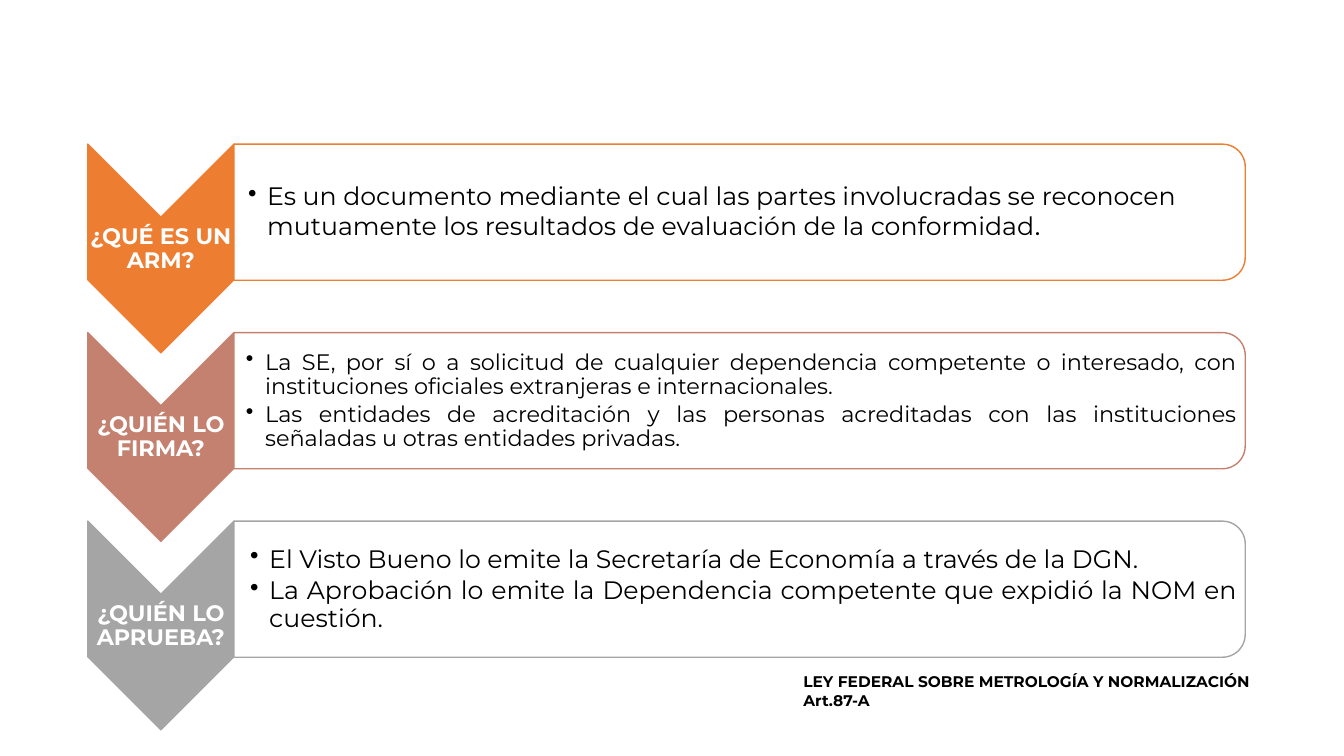
from lxml.etree import SubElement
from pptx import Presentation
from pptx.dml.color import RGBColor
from pptx.enum.shapes import MSO_SHAPE as Preset
from pptx.enum.text import MSO_ANCHOR as Anchor, PP_ALIGN as Align
from pptx.oxml.ns import qn
from pptx.util import Inches, Pt

COLORS = {"orange": "ED7D31", "clay": "C48170", "gray": "A5A5A5",
          "white": "FFFFFF", "black": "000000"}
FIRST_TOP, PITCH = 1.43, 1.87
ARROW_LEFT, ARROW_WIDTH, ARROW_HEIGHT = 0.87, 1.45, 2.07
PANEL_LEFT, PANEL_WIDTH, PANEL_HEIGHT = 2.32, 10.03, 1.35

# Question, color, answer alignment, left inset, answers as lists of (text, size)
QUESTIONS = [
    ("¿QUÉ ES UN ARM?", "orange", Align.LEFT, 0.14, [
        [("Es un documento mediante el cual las partes involucradas se reconocen "
          "mutuamente los resultados de evaluación de la conformidad", 18), (".", 20)]]),
    ("¿QUIÉN LO FIRMA?", "clay", Align.JUSTIFY, 0.12, [
        [("La SE, por sí o a solicitud de cualquier dependencia competente o interesado, "
          "con instituciones oficiales extranjeras e internacionales.", 16)],
        [("Las entidades de acreditación y las personas acreditadas con las instituciones "
          "señaladas u otras entidades privadas.", 16)]]),
    ("¿QUIÉN LO APRUEBA?", "gray", Align.JUSTIFY, 0.16, [
        [("El Visto Bueno lo emite la Secretaría de Economía a través de la DGN.", 18)],
        [("La Aprobación lo emite la Dependencia competente que expidió la NOM en "
          "cuestión.", 18)]]),
]
LAW = [[("LEY FEDERAL SOBRE METROLOGÍA Y NORMALIZACIÓN", 11)], [("Art.87-A", 11)]]


def rgb(name):
    return RGBColor.from_string(COLORS[name])


def apply(target, values):
    for name, value in values.items():
        setattr(target, name, value)


class SlideBuilder:
    font = "Montserrat"

    def __init__(self, slide):
        self.slide = slide

    def turned_shape(self, preset, left, top, width, height, fill, line):
        """Add a preset turned by 90 degrees that covers the given box once turned."""
        shift = (width - height) / 2
        shape = self.slide.shapes.add_shape(
            preset, Inches(left + shift), Inches(top - shift), Inches(height), Inches(width))
        shape.rotation = 90
        shape.shadow.inherit = False
        shape.fill.solid()
        shape.fill.fore_color.rgb = rgb(fill)
        shape.line.color.rgb = rgb(line)
        shape.line.width = Pt(1)

    def text(self, box, paragraphs, color="black", bold=False, bullet=False,
             frame_format=None, paragraph_format=None):
        frame = self.slide.shapes.add_textbox(*map(Inches, box)).text_frame
        apply(frame, {"word_wrap": True, **(frame_format or {})})
        for index, runs in enumerate(paragraphs):
            paragraph = frame.add_paragraph() if index else frame.paragraphs[0]
            if bullet:
                self.bullet(paragraph)
            apply(paragraph, paragraph_format or {})
            for content, size in runs:
                run = paragraph.add_run()
                run.text = content
                apply(run.font, {"name": self.font, "size": Pt(size), "bold": bold})
                run.font.color.rgb = rgb(color)

    def bullet(self, paragraph):
        properties = paragraph._p.get_or_add_pPr()
        properties.set("marL", str(Inches(0.19)))
        properties.set("indent", str(-Inches(0.19)))
        SubElement(properties, qn("a:buChar"), char="•")

    def question(self, top, question, color, align, inset, answers):
        """Add one row: a downward arrow with its question and a panel of answers."""
        margins = {f"margin_{side}": Inches(0.01)
                   for side in ("left", "right", "top", "bottom")}
        framing = {"vertical_anchor": Anchor.MIDDLE, **margins}
        self.turned_shape(Preset.CHEVRON, ARROW_LEFT, top, ARROW_WIDTH, ARROW_HEIGHT,
                          color, color)
        self.text((ARROW_LEFT, top + 0.73, ARROW_WIDTH, 0.62), [[(question, 16)]],
                  "white", bold=True, frame_format=framing,
                  paragraph_format={"alignment": Align.CENTER, "line_spacing": 0.9,
                                    "space_after": Pt(5.6)})
        self.turned_shape(Preset.ROUND_2_SAME_RECTANGLE, PANEL_LEFT, top, PANEL_WIDTH,
                          PANEL_HEIGHT, "white", color)
        self.text((PANEL_LEFT, top + 0.07, 9.96, 1.22), answers, bullet=True,
                  frame_format={**framing, "margin_left": Inches(inset)},
                  paragraph_format={"alignment": align, "line_spacing": 0.9,
                                    "space_after": Pt(3)})


def main():
    deck = Presentation()
    apply(deck, {"slide_width": Inches(13.33), "slide_height": Inches(7.5)})
    builder = SlideBuilder(deck.slides.add_slide(deck.slide_layouts[6]))
    for row, entry in enumerate(QUESTIONS):
        builder.question(FIRST_TOP + row * PITCH, *entry)
    builder.text((7.87, 6.62, 4.81, 0.47), LAW, bold=True,
                 paragraph_format={"alignment": Align.JUSTIFY})
    deck.save("out.pptx")


if __name__ == "__main__":
    main()
